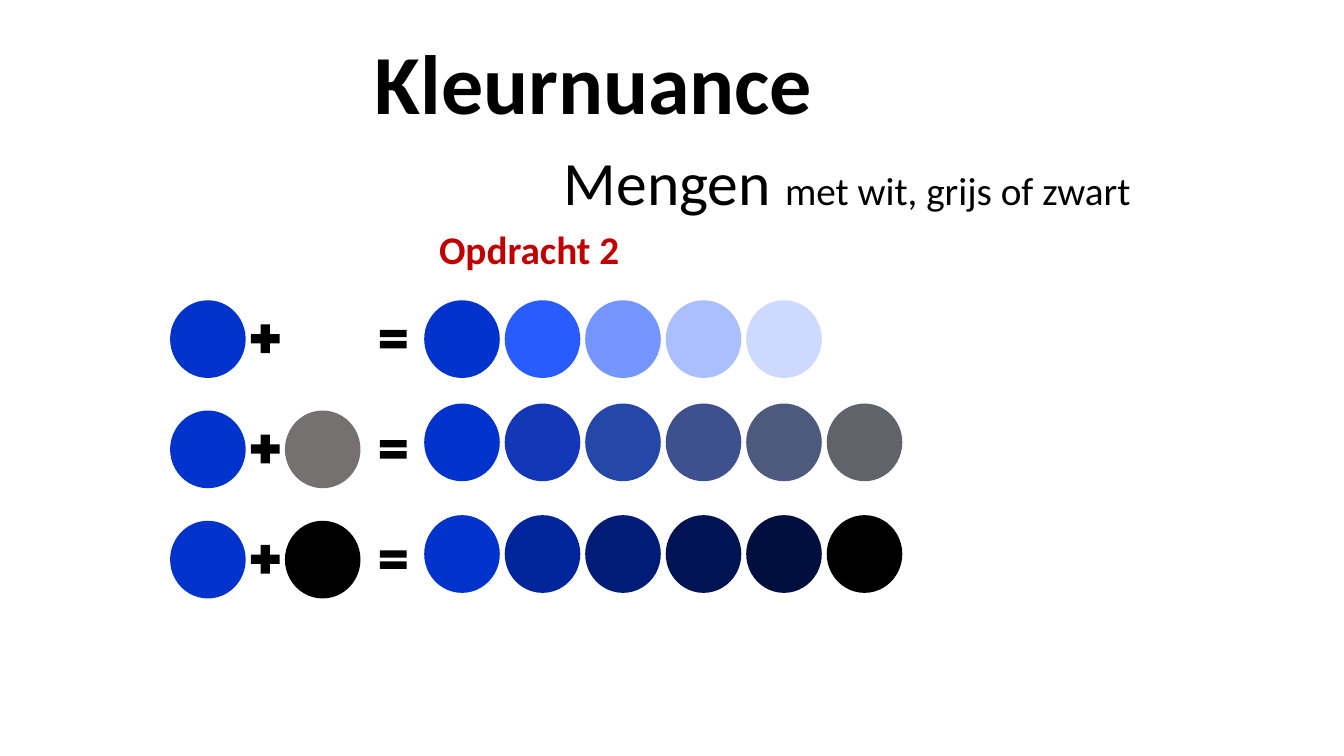
import pptx
import pptx.dml.color
import pptx.enum.shapes
import pptx.enum.text
import pptx.util

Pt = pptx.util.Pt
SHAPES = pptx.enum.shapes.MSO_SHAPE

BLUE, BLACK, WHITE, RED = "0033CC", "000000", "FFFFFF", "C00000"
CIRCLE_WIDTH, CIRCLE_HEIGHT = 54, 55.5
RESULT_PITCH = 57.5
ROW_LEFT, ROW_TOP, ROW_PITCH = 121.5, 214.5, 78.75

# Added colour, vertical shift of the results, resulting shades
MIXES = [
    (WHITE, 0, [BLUE, "295CFF", "7596FF", "ABBFFF", "CDD9FF", WHITE]),
    ("767171", -5, [BLUE, "1437B8", "2447A8", "3E518E", "4E597E", "61636B"]),
    (BLACK, -4, [BLUE, "00259A", "001C76", "001454", "000F3E", BLACK]),
]


def colour(hex_string):
    return pptx.dml.color.RGBColor.from_string(hex_string)


def write_text(shape, box, runs, wrap=True, indent=0):
    """Place a text shape and fill it with (text, size, bold, colour) runs."""
    shape.left, shape.top, shape.width, shape.height = map(Pt, box)
    frame = shape.text_frame
    frame_format = {
        "word_wrap": wrap,
        "auto_size": pptx.enum.text.MSO_AUTO_SIZE.NONE,
        "vertical_anchor": pptx.enum.text.MSO_ANCHOR.TOP,
    }
    for name, value in frame_format.items():
        setattr(frame, name, value)
    paragraph = frame.paragraphs[0]
    paragraph.alignment = pptx.enum.text.PP_ALIGN.LEFT
    paragraph.space_before = Pt(0)
    properties = paragraph._p.get_or_add_pPr()
    properties.set("marL", str(Pt(indent)))
    properties.set("indent", "0")
    for text, size, bold, text_colour in runs:
        run = paragraph.add_run()
        run.text = text
        font_format = {"name": "Calibri", "size": Pt(size), "bold": bold}
        for name, value in font_format.items():
            setattr(run.font, name, value)
        run.font.color.rgb = colour(text_colour)


def add_headings(slide):
    title, subtitle = slide.placeholders
    write_text(title, (260.5, 18, 340, 80),
               [("Kleurnuance", 60, True, BLACK)], wrap=False)
    write_text(subtitle, (107.5, 99.5, 792, 60.5),
               [("Mengen ", 44, False, BLACK),
                ("met wit, grijs of zwart", 28, False, BLACK)], indent=288)
    assignment = slide.shapes.add_textbox(0, 0, 0, 0)
    write_text(assignment, (306.5, 157.5, 240, 41),
               [("Opdracht 2", 28, True, RED)])


def add_filled_shape(group, kind, box, fill):
    shape = group.shapes.add_shape(kind, *map(Pt, box))
    shape.shadow.inherit = False
    shape.fill.solid()
    shape.fill.fore_color.rgb = colour(fill)
    shape.line.fill.background()


def add_circle(group, left, top, fill):
    add_filled_shape(group, SHAPES.OVAL,
                     (left, top, CIRCLE_WIDTH, CIRCLE_HEIGHT), fill)


def add_mix_row(slide, left, top, added, shift, shades):
    """Draw blue + added colour = the row of shades."""
    group = slide.shapes.add_group_shape()
    add_circle(group, left, top, BLUE)
    add_filled_shape(group, SHAPES.MATH_PLUS,
                     (left + 54, top + 13.5, 28, 28), BLACK)
    add_circle(group, left + 82, top, added)
    add_filled_shape(group, SHAPES.MATH_EQUAL,
                     (left + 146.5, top + 16.5, 26, 22.5), BLACK)
    for index, shade in enumerate(shades):
        add_circle(group, left + 181.5 + index * RESULT_PITCH,
                   top + shift, shade)


def main():
    presentation = pptx.Presentation()
    presentation.slide_width = Pt(960)
    presentation.slide_height = Pt(540)
    slide = presentation.slides.add_slide(presentation.slide_layouts[0])
    add_headings(slide)
    for index, mix in enumerate(MIXES):
        add_mix_row(slide, ROW_LEFT, ROW_TOP + index * ROW_PITCH, *mix)
    presentation.save("out.pptx")


if __name__ == "__main__":
    main()
